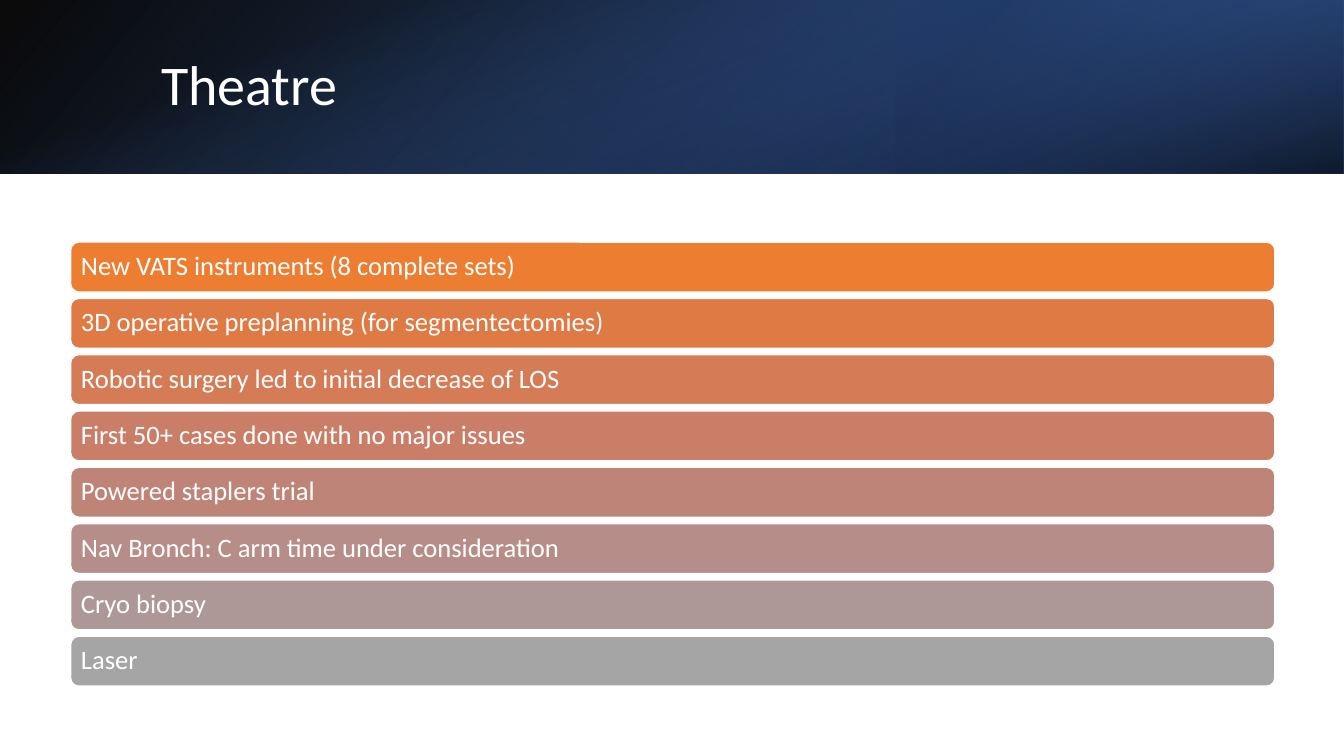
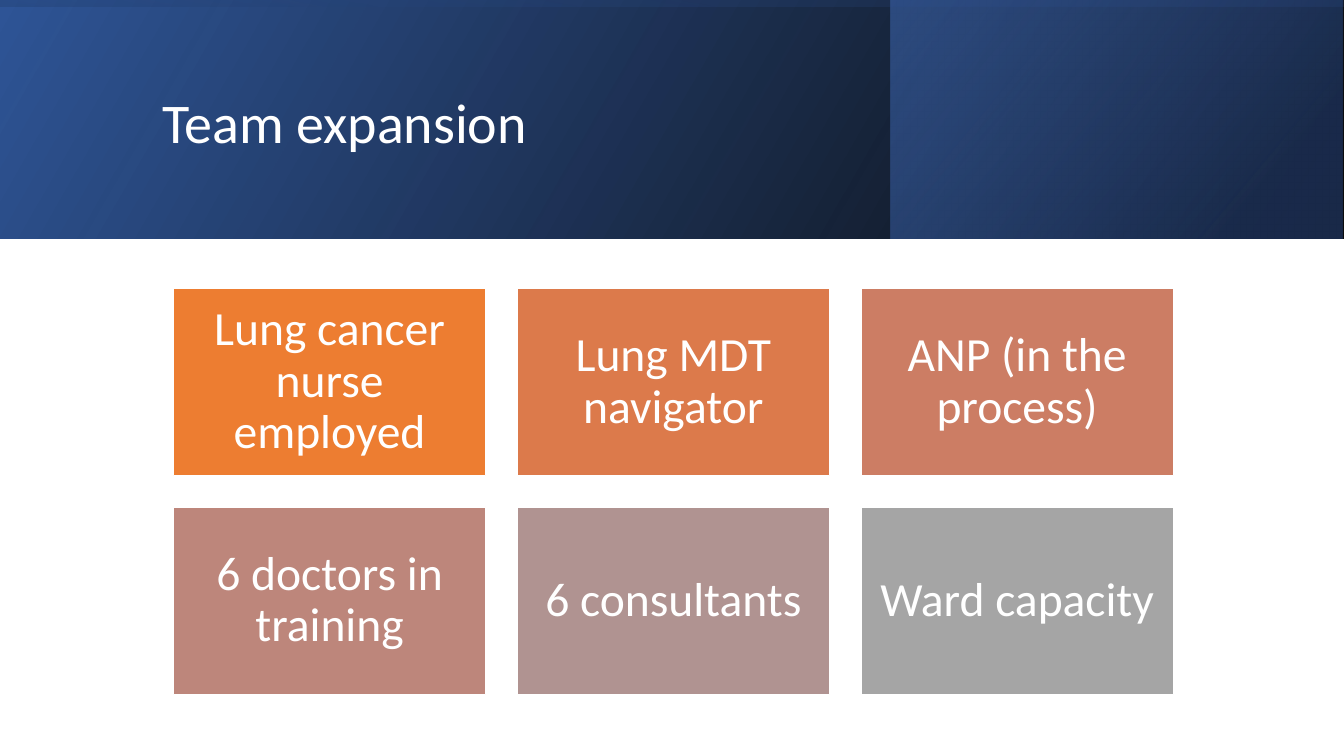
from colorsys import hls_to_rgb, rgb_to_hls
from dataclasses import dataclass

from lxml.etree import SubElement
from pptx import Presentation
from pptx.dml.color import RGBColor
from pptx.enum.shapes import MSO_SHAPE as Shape
from pptx.enum.text import MSO_ANCHOR as Anchor, PP_ALIGN as Align
from pptx.oxml.ns import qn
from pptx.util import Cm, Pt


@dataclass(frozen=True)
class Theme:
    font: str = "Calibri"
    white: str = "FFFFFF"
    black: str = "000000"
    navy: str = "203864"
    blue: str = "2F5597"
    bright_blue: str = "4472C4"
    ramp_start: str = "ED7D31"
    ramp_end: str = "A5A5A5"
    title_size: int = 40
    bar_size: int = 19
    card_size: int = 34
    line_spacing: float = 0.9


@dataclass(frozen=True)
class Box:
    """A region in centimetres."""
    left: float
    top: float
    width: float
    height: float

    def lengths(self):
        return [Cm(value) for value in (self.left, self.top, self.width, self.height)]

    def turned(self):
        """The upright box which covers this one after a quarter turn."""
        return Box(self.left + (self.width - self.height) / 2,
                   self.top + (self.height - self.width) / 2,
                   self.height, self.width)

    def cells(self, columns, rows, gap):
        """Equal cells, row by row, with the same gap both ways."""
        width = (self.width - gap * (columns - 1)) / columns
        height = (self.height - gap * (rows - 1)) / rows
        return [Box(self.left + column * (width + gap),
                    self.top + row * (height + gap), width, height)
                for row in range(rows) for column in range(columns)]


@dataclass(frozen=True)
class Layer:
    """A gradient: stops are (position %, colour, opacity %), angle is clockwise."""
    stops: tuple
    angle: int
    rotation: int = 0
    flipped: bool = True


THEME = Theme()
SLIDE_WIDTH, SLIDE_HEIGHT = 33.87, 19.05
BASE_STOPS = ((0, THEME.black, 96), (100, THEME.blue, 100))

THEATRE_ITEMS = (
    "New VATS instruments (8 complete sets)",
    "3D operative preplanning (for segmentectomies)",
    "Robotic surgery led to initial decrease of LOS",
    "First 50+ cases done with no major issues",
    "Powered staplers trial",
    "Nav Bronch: C arm time under consideration",
    "Cryo biopsy",
    "Laser",
)
TEAM_ITEMS = (
    "Lung cancer nurse employed",
    "Lung MDT navigator",
    "ANP (in the process)",
    "6 doctors in training",
    "6 consultants",
    "Ward capacity",
)


def color_ramp(count):
    """Colours evenly spaced in hue, lightness and saturation."""
    start, end = (rgb_to_hls(*(part / 255 for part in RGBColor.from_string(color)))
                  for color in (THEME.ramp_start, THEME.ramp_end))
    for index in range(count):
        share = index / (count - 1)
        mixed = (a + (b - a) * share for a, b in zip(start, end))
        yield RGBColor(*(round(part * 255) for part in hls_to_rgb(*mixed)))


def write_text(shape, text, size, align=Align.LEFT, inset=None):
    frame = shape.text_frame
    frame.word_wrap = True
    frame.vertical_anchor = Anchor.MIDDLE
    if inset is not None:
        frame.margin_left = frame.margin_right = Cm(inset)
        frame.margin_top = frame.margin_bottom = Cm(inset)
    paragraph = frame.paragraphs[0]
    paragraph.alignment = align
    paragraph.line_spacing = THEME.line_spacing
    run = paragraph.add_run()
    run.text = text
    run.font.name = THEME.font
    run.font.size = Pt(size)
    run.font.color.rgb = RGBColor.from_string(THEME.white)


def add_layer(slide, box, layer):
    shape = slide.shapes.add_shape(Shape.RECTANGLE, *box.lengths())
    shape.shadow.inherit = False
    shape.line.fill.background()
    shape.rotation = layer.rotation
    if layer.flipped:
        shape._element.spPr.find(qn("a:xfrm")).set("flipH", "1")
    shape.fill.gradient()
    shape.fill.gradient_angle = 360 - layer.angle
    for stop, (position, color, _) in zip(shape.fill.gradient_stops, layer.stops):
        stop.position = position / 100
        stop.color.rgb = RGBColor.from_string(color)
    colors = list(shape._element.spPr.iter(qn("a:srgbClr")))
    for color, (_, _, opacity) in zip(colors, layer.stops):
        SubElement(color, qn("a:alpha")).set("val", str(opacity * 1000))


def add_header(slide, band, accent, title_box, title, layers):
    """A band of three gradients with the title on top."""
    base, accent_layer, shade = layers
    add_layer(slide, band, base)
    add_layer(slide, accent, accent_layer)
    add_layer(slide, band.turned(), shade)
    text_box = slide.shapes.add_textbox(*title_box.lengths())
    write_text(text_box, title, THEME.title_size)


def add_tiles(slide, cells, items, kind, size, align, inset):
    for cell, item, color in zip(cells, items, color_ramp(len(items))):
        tile = slide.shapes.add_shape(kind, *cell.lengths())
        tile.shadow.inherit = False
        tile.fill.solid()
        tile.fill.fore_color.rgb = color
        tile.line.color.rgb = RGBColor.from_string(THEME.white)
        tile.line.width = Pt(1)
        write_text(tile, item, size, align, inset)


def add_theatre_slide(slide):
    layers = (
        Layer(BASE_STOPS, 140),
        Layer(((19, THEME.navy, 68), (100, THEME.bright_blue, 79)), 320, 180),
        Layer(((23, THEME.bright_blue, 0), (99, THEME.black, 74)), 340, 90, False),
    )
    add_header(slide, Box(0, 0, SLIDE_WIDTH, 4.37), Box(22.58, 0, 11.28, 4.37),
               Box(3.81, 0.97, 27.89, 2.44), "Theatre", layers)
    bars = Box(1.78, 6.1, 30.35, 11.19).cells(1, len(THEATRE_ITEMS), 0.16)
    add_tiles(slide, bars, THEATRE_ITEMS, Shape.ROUNDED_RECTANGLE,
              THEME.bar_size, Align.LEFT, 0.2)


def add_team_slide(slide):
    layers = (
        Layer(BASE_STOPS, 330),
        Layer(((19, THEME.navy, 68), (100, THEME.bright_blue, 48)), 320),
        Layer(((23, THEME.blue, 16), (99, THEME.black, 45)), 350, 270),
    )
    add_header(slide, Box(0, 0, SLIDE_WIDTH, 6.02), Box(22.45, 0, 11.38, 6.02),
               Box(3.84, 0.97, 27, 4.37), "Team expansion", layers)
    cards = Box(4.37, 7.26, 25.2, 10.24).cells(3, 2, 0.79)
    add_tiles(slide, cards, TEAM_ITEMS, Shape.RECTANGLE,
              THEME.card_size, Align.CENTER, 0.36)


def main():
    presentation = Presentation()
    presentation.slide_width = Cm(SLIDE_WIDTH)
    presentation.slide_height = Cm(SLIDE_HEIGHT)
    blank = presentation.slide_layouts[6]
    for fill_slide in (add_theatre_slide, add_team_slide):
        fill_slide(presentation.slides.add_slide(blank))
    presentation.save("out.pptx")


if __name__ == "__main__":
    main()
